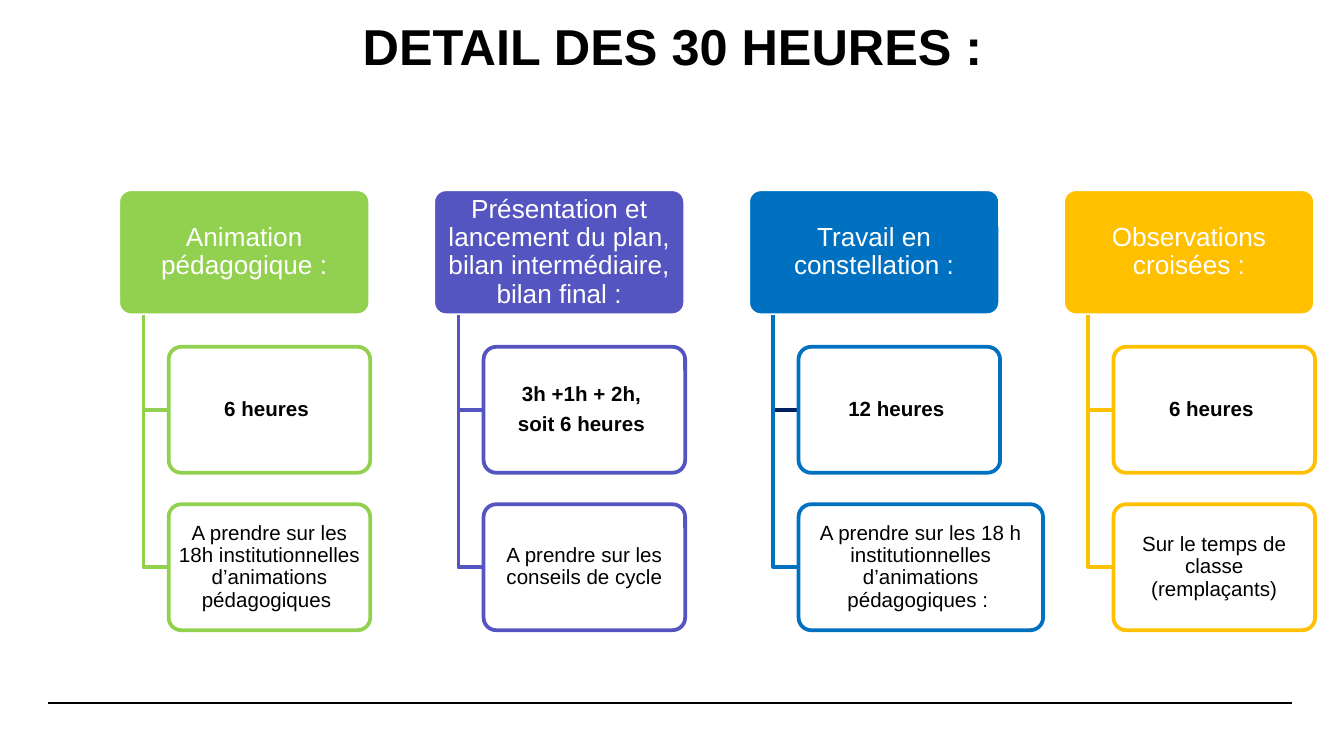
from pptx import Presentation
from pptx.dml.color import RGBColor
from pptx.enum.shapes import MSO_CONNECTOR, MSO_SHAPE
from pptx.enum.text import MSO_ANCHOR, MSO_AUTO_SIZE, PP_ALIGN
from pptx.oxml.ns import qn
from pptx.util import Pt
from lxml.etree import SubElement

WHITE = RGBColor(0xFF, 0xFF, 0xFF)
BLACK = RGBColor(0x00, 0x00, 0x00)
GREEN = RGBColor(0x92, 0xD0, 0x50)
VIOLET = RGBColor(0x55, 0x55, 0xC1)
BLUE = RGBColor(0x00, 0x70, 0xC0)
NAVY = RGBColor(0x00, 0x20, 0x60)
AMBER = RGBColor(0xFF, 0xC0, 0x00)

# Grid, in points
LEFT, TOP, PITCH = 63.36, 101.4, 168.72
HEAD_W, BOX_W, WIDE_W, BOX_H = 135, 108, 131, 67.5
STEP = BOX_H * 1.25
INDENT = HEAD_W / 5

# Heading, colour, first branch colour, hours, source of the hours, its width
COLUMNS = [
    ("Animation pédagogique :", GREEN, GREEN, ["6 heures "],
     "A prendre sur les 18h institutionnelles d’animations pédagogiques ", BOX_W),
    ("Présentation et lancement du plan, bilan intermédiaire, bilan final :",
     VIOLET, VIOLET, ["3h +1h + 2h, ", "soit 6 heures "],
     "A prendre sur les conseils de cycle", BOX_W),
    ("Travail en constellation :", BLUE, NAVY, ["12 heures "],
     "A prendre sur les 18 h institutionnelles d’animations pédagogiques : ", WIDE_W),
    ("Observations croisées :", AMBER, AMBER, ["6 heures "],
     "Sur le temps de classe (remplaçants)", BOX_W),
]


class SlideBuilder:
    font = "Arial"
    line_width = 2

    def __init__(self, slide):
        self.slide = slide

    def set_text(self, tf, lines, size, color, bold=False, inset=0):
        tf.word_wrap = True
        tf.auto_size = MSO_AUTO_SIZE.NONE
        tf.vertical_anchor = MSO_ANCHOR.MIDDLE
        tf.margin_left = tf.margin_right = Pt(inset)
        tf.margin_top = tf.margin_bottom = Pt(inset)
        for i, line in enumerate(lines):
            p = tf.add_paragraph() if i else tf.paragraphs[0]
            p.text = line
            p.alignment = PP_ALIGN.CENTER
            p.line_spacing = 0.9
            p.space_before = Pt(4 if i else 0)
            p.font.name, p.font.size = self.font, Pt(size)
            p.font.bold, p.font.color.rgb = bold, color

    def title(self, text, x, y, w, h):
        sp = self.slide.shapes.title
        sp.left, sp.top, sp.width, sp.height = Pt(x), Pt(y), Pt(w), Pt(h)
        self.set_text(sp.text_frame, [text], 27, BLACK, bold=True)

    def rule(self, x1, x2, y):
        cn = self.slide.shapes.add_connector(
            MSO_CONNECTOR.STRAIGHT, Pt(x1), Pt(y), Pt(x2), Pt(y))
        cn.line.color.rgb, cn.line.width = BLACK, Pt(0.8)
        SubElement(cn._element.spPr, qn("a:effectLst"))

    def box(self, x, y, w, lines, size, fill, line, color, bold=False, alpha=None):
        sp = self.slide.shapes.add_shape(
            MSO_SHAPE.ROUNDED_RECTANGLE, Pt(x), Pt(y), Pt(w), Pt(BOX_H))
        sp.adjustments[0] = 0.1
        sp.shadow.inherit = False
        sp.fill.solid()
        sp.fill.fore_color.rgb = fill
        if alpha:
            clr = sp._element.spPr.find(qn("a:solidFill"))[0]
            SubElement(clr, qn("a:alpha"), val=str(alpha * 1000))
        sp.line.color.rgb, sp.line.width = line, Pt(self.line_width)
        self.set_text(sp.text_frame, lines, size, color, bold, inset=1.5)

    def branch(self, x, y1, x2, y2, color):
        fb = self.slide.shapes.build_freeform(Pt(x), Pt(y1))
        fb.add_line_segments([(Pt(x), Pt(y2)), (Pt(x2), Pt(y2))], close=False)
        sp = fb.convert_to_shape()
        sp.shadow.inherit = False
        sp.fill.background()
        sp.line.color.rgb, sp.line.width = color, Pt(self.line_width)


def main():
    prs = Presentation()
    prs.slide_width, prs.slide_height = Pt(720), Pt(405)
    s = SlideBuilder(prs.slides.add_slide(prs.slide_layouts[5]))

    # Footer rules and title
    for x in (25.5, 28):
        s.rule(x, x + 664, 376.6)
    s.title("DETAIL DES 30 HEURES :", 63.36, 7.2, 594, 38)

    # One column per kind of session: heading, then two branches
    for i, (heading, color, first, hours, origin, width) in enumerate(COLUMNS):
        x = LEFT + i * PITCH
        s.box(x, TOP, HEAD_W, [heading], 14, color, WHITE, WHITE)
        rows = [(hours, first, BOX_W, True), ([origin], color, width, False)]
        for j, (lines, branch_color, w, bold) in enumerate(rows, 1):
            y = TOP + j * STEP
            s.branch(x + INDENT / 2, TOP + BOX_H, x + INDENT, y + BOX_H / 2, branch_color)
            s.box(x + INDENT, y, w, lines, 11, WHITE, color, BLACK, bold, alpha=90)

    prs.save("out.pptx")


if __name__ == "__main__":
    main()
